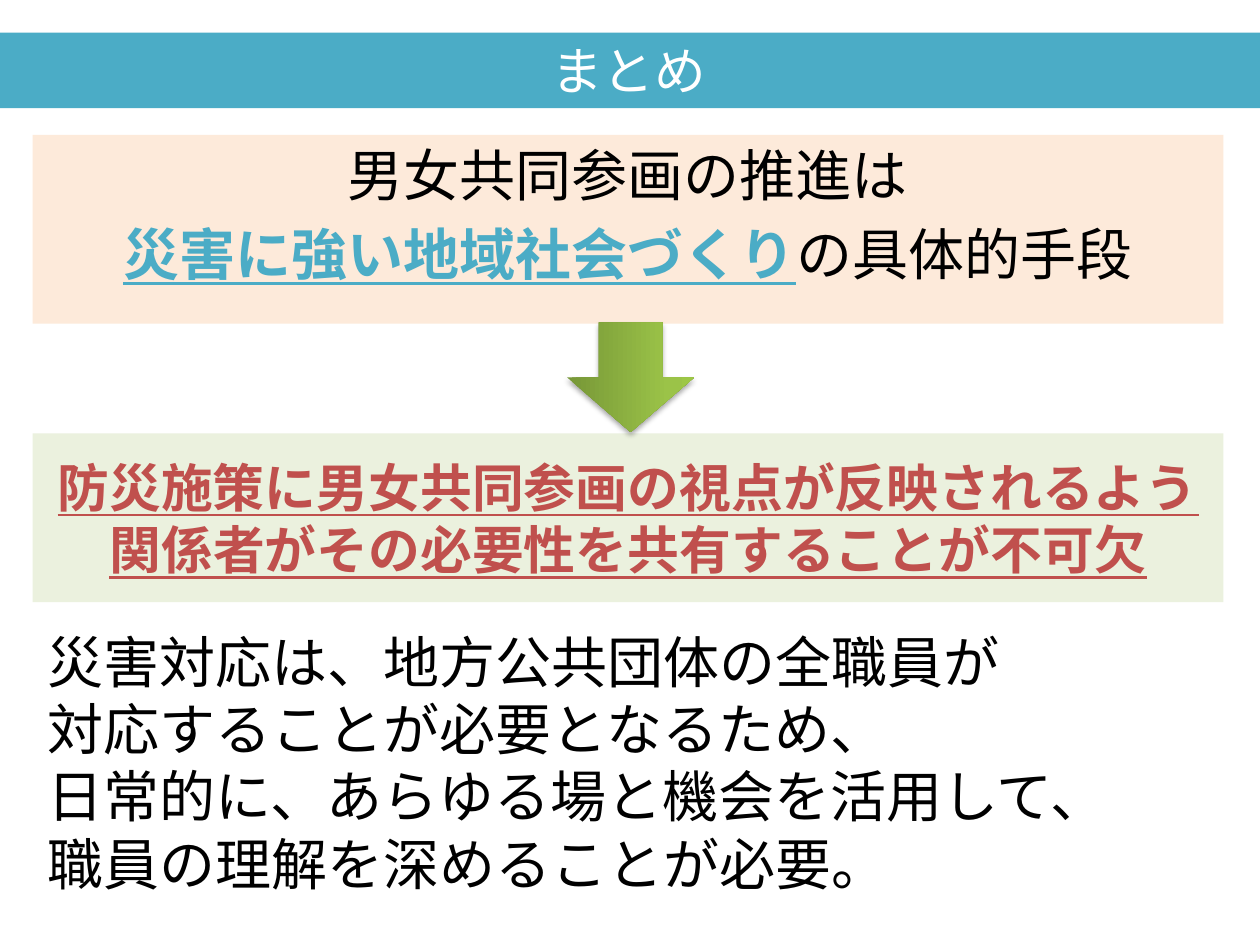
from dataclasses import dataclass

from lxml import etree
from pptx import Presentation
from pptx.dml.color import RGBColor
from pptx.enum.shapes import MSO_SHAPE as Shape
from pptx.enum.text import MSO_ANCHOR as Anchor, PP_ALIGN as Align
from pptx.oxml import parse_xml
from pptx.oxml.ns import qn
from pptx.slide import Slide
from pptx.util import Inches, Pt

BLACK, WHITE, TEAL, RED = "000000", "FFFFFF", "4BACC6", "C0504D"
DRAWING_NS = "http://schemas.openxmlformats.org/drawingml/2006/main"


@dataclass(frozen=True)
class Span:
    text: str
    color: str = BLACK
    strong: bool = False  # bold and underlined


@dataclass(frozen=True)
class Panel:
    left: float
    top: float
    width: float
    height: float
    lines: tuple[tuple[Span, ...], ...]
    size: float
    fill: str | None = None
    font: str = "Calibri"
    align: Align = Align.CENTER
    anchor: Anchor = Anchor.TOP


PANELS = (
    Panel(-0.02, 0.26, 10.02, 0.6, ((Span("まとめ", WHITE),),), 29.5, TEAL, "Arial"),
    Panel(0.26, 1.07, 9.45, 1.5, (
        (Span("男女共同参画の推進は"),),
        (Span("災害に強い地域社会づくり", TEAL, True), Span("の具体的手段")),
    ), 32, "FDEADA"),
    Panel(0.26, 3.44, 9.45, 1.34, (
        (Span("防災施策に男女共同参画の視点が反映されるよう"
              "関係者がその必要性を共有することが不可欠", RED, True),),
    ), 29.6, "EBF1DE", anchor=Anchor.MIDDLE),
    Panel(0.28, 4.93, 9.45, 2.42, (
        (Span("災害対応は、地方公共団体の全職員が\v対応することが必要となるため、\v"
              "日常的に、あらゆる場と機会を活用して、\v職員の理解を深めることが必要。"),),
    ), 32, align=Align.LEFT),
)


def rgb(color: str) -> RGBColor:
    return RGBColor.from_string(color)


def add_panel(page: Slide, panel: Panel) -> None:
    place = [Inches(v) for v in (panel.left, panel.top, panel.width, panel.height)]
    if panel.fill:
        box = page.shapes.add_shape(Shape.RECTANGLE, *place)
        box.shadow.inherit = False
        box.fill.solid()
        box.fill.fore_color.rgb = rgb(panel.fill)
        box.line.fill.background()
    else:
        box = page.shapes.add_textbox(*place)
    frame = box.text_frame
    frame.word_wrap = True
    frame.vertical_anchor = panel.anchor
    for index, line in enumerate(panel.lines):
        para = frame.add_paragraph() if index else frame.paragraphs[0]
        para.alignment = panel.align
        para.space_before = Pt(0.2 * panel.size) if index else Pt(0)
        para.font.name = panel.font
        para.font.size = Pt(panel.size)
        for span in line:
            add_span(para, span)


def add_span(para, span: Span) -> None:
    for index, text in enumerate(span.text.split("\v")):
        if index:
            para.add_line_break()
        run = para.add_run()
        run.text = text
        run.font.color.rgb = rgb(span.color)
        if span.strong:
            run.font.bold = run.font.underline = True


def add_down_arrow(page: Slide) -> None:
    """Add a right arrow turned downwards, with a green gradient and a soft shadow."""
    arrow = page.shapes.add_shape(
        Shape.RIGHT_ARROW, Inches(4.57), Inches(2.49), Inches(0.87), Inches(1.01))
    arrow.rotation = 90
    arrow.line.fill.background()
    arrow.fill.gradient()
    arrow.fill.gradient_angle = 90
    stops = arrow._element.spPr.find(".//" + qn("a:gsLst"))
    for stop in list(stops):
        stops.remove(stop)
    for percent, color in ((0, "779737"), (80, "9BC348"), (100, "9DC746")):
        stop = etree.SubElement(stops, qn("a:gs"), pos=str(percent * 1000))
        etree.SubElement(stop, qn("a:srgbClr"), val=color)
    arrow._element.spPr.append(parse_xml(
        f'<a:effectLst xmlns:a="{DRAWING_NS}">'
        f'<a:outerShdw blurRad="{Pt(3.1)}" dist="{Pt(1.8)}" dir="5400000" rotWithShape="0">'
        f'<a:srgbClr val="{BLACK}"><a:alpha val="35000"/></a:srgbClr>'
        "</a:outerShdw></a:effectLst>"))


def main() -> None:
    deck = Presentation()
    deck.slide_width, deck.slide_height = Inches(10), Inches(7.5)
    page = deck.slides.add_slide(deck.slide_layouts[6])
    *boxes, closing = PANELS
    for panel in boxes:
        add_panel(page, panel)
    add_down_arrow(page)
    add_panel(page, closing)
    deck.save("out.pptx")


if __name__ == "__main__":
    main()
